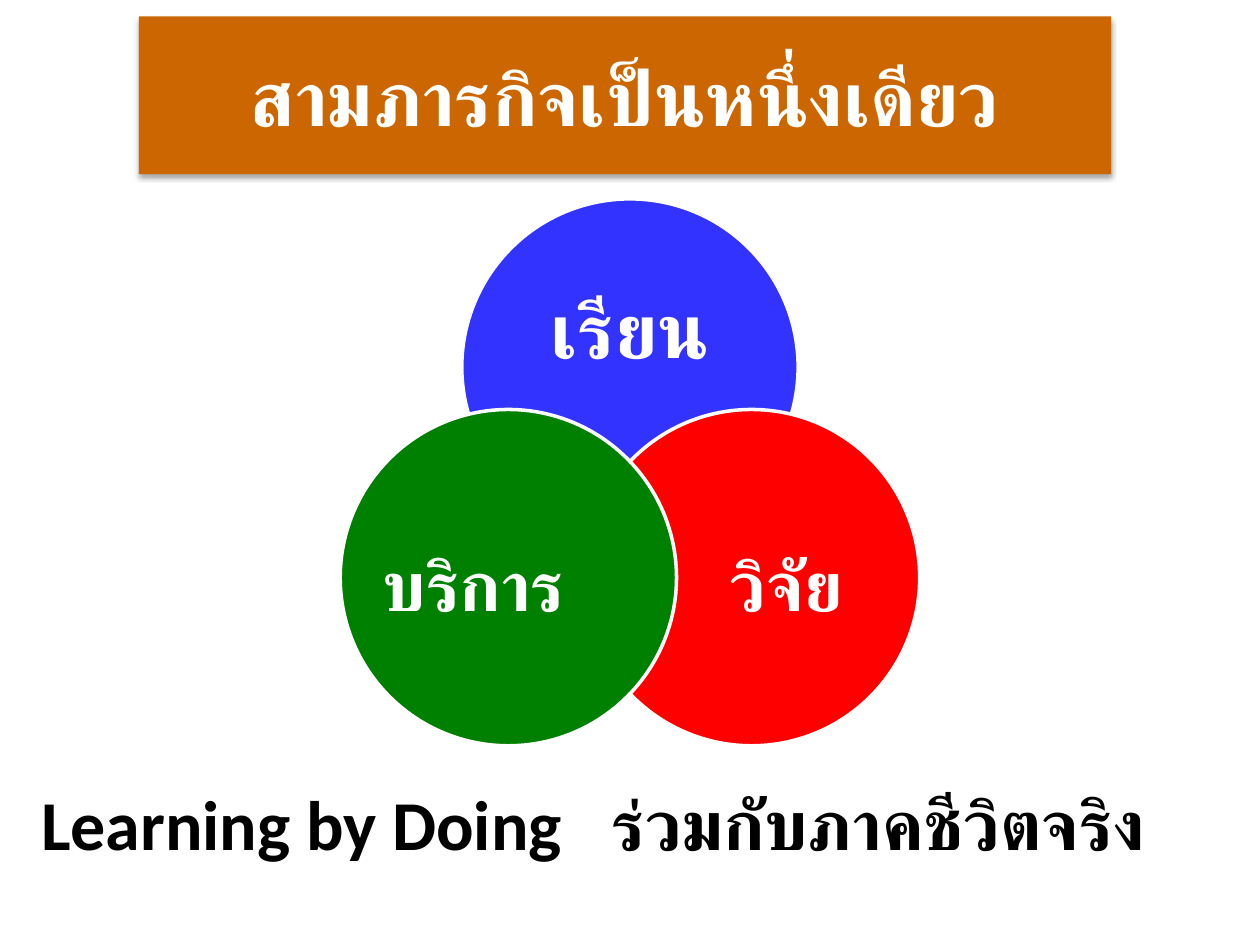
from dataclasses import dataclass
from math import cos, radians, sin

from lxml.etree import SubElement
from pptx import Presentation
from pptx.dml.color import RGBColor
from pptx.enum.shapes import MSO_SHAPE
from pptx.enum.text import MSO_ANCHOR, MSO_AUTO_SIZE, PP_ALIGN
from pptx.oxml.ns import qn
from pptx.util import Cm, Pt


@dataclass(frozen=True)
class Theme:
    font: str = "Calibri"
    banner: str = "CC6600"
    learning: str = "3333FF"
    research: str = "FF0000"
    service: str = "008000"
    light: str = "FFFFFF"
    dark: str = "000000"
    large: int = 44
    medium: int = 40


class SlideBuilder:
    """Holds the theme and the current slide."""

    def __init__(self, slide, theme):
        self.slide = slide
        self.theme = theme

    def set_text(self, shape, text, size, color, align):
        frame = shape.text_frame
        frame.word_wrap = True
        frame.vertical_anchor = MSO_ANCHOR.MIDDLE
        frame.text = text
        paragraph = frame.paragraphs[0]
        paragraph.alignment = align
        font = paragraph.font
        font.name, font.size, font.bold = self.theme.font, Pt(size), True
        font.color.rgb = RGBColor.from_string(color)
        return paragraph

    def paint(self, shape, color):
        shape.fill.solid()
        shape.fill.fore_color.rgb = RGBColor.from_string(color)

    def title(self, text, left, top, width, height):
        shape = self.slide.shapes.title
        shape.left, shape.top = Cm(left), Cm(top)
        shape.width, shape.height = Cm(width), Cm(height)
        self.paint(shape, self.theme.banner)
        self.set_text(shape, text, self.theme.large, self.theme.light, PP_ALIGN.CENTER)
        shape.text_frame.auto_size = MSO_AUTO_SIZE.NONE
        # Soft shadow below the banner
        effects = SubElement(shape.element.spPr, qn("a:effectLst"))
        shadow = SubElement(effects, qn("a:outerShdw"), blurRad=str(Pt(3.1)),
                            dist=str(Pt(1.8)), dir="5400000", rotWithShape="0")
        color = SubElement(shadow, qn("a:srgbClr"), val=self.theme.dark)
        SubElement(color, qn("a:alpha"), val="35000")

    def circle(self, center_x, center_y, diameter, color):
        shape = self.slide.shapes.add_shape(
            MSO_SHAPE.OVAL, Cm(center_x - diameter / 2), Cm(center_y - diameter / 2),
            Cm(diameter), Cm(diameter))
        shape.shadow.inherit = False
        self.paint(shape, color)
        shape.line.color.rgb = RGBColor.from_string(self.theme.light)
        shape.line.width = Pt(2)

    def label(self, text, center_x, center_y, width, height, size):
        box = self.slide.shapes.add_textbox(
            Cm(center_x - width / 2), Cm(center_y - height / 2), Cm(width), Cm(height))
        frame = box.text_frame
        frame.margin_left = frame.margin_right = frame.margin_top = frame.margin_bottom = 0
        paragraph = self.set_text(box, text, size, self.theme.light, PP_ALIGN.CENTER)
        paragraph.line_spacing = 0.9

    def caption(self, text, left, top, width, height, tab_position):
        box = self.slide.shapes.add_textbox(Cm(left), Cm(top), Cm(width), Cm(height))
        paragraph = self.set_text(box, text, self.theme.medium, self.theme.dark, PP_ALIGN.LEFT)
        box.text_frame.vertical_anchor = MSO_ANCHOR.TOP
        # The tab stop separates the two phrases
        properties = paragraph._p.get_or_add_pPr()
        tabs = properties.makeelement(qn("a:tabLst"))
        SubElement(tabs, qn("a:tab"), pos=str(Cm(tab_position)), algn="l")
        properties.insert(0, tabs)


def main():
    presentation = Presentation()
    presentation.slide_width, presentation.slide_height = Cm(25.4), Cm(19.05)
    slide = presentation.slides.add_slide(presentation.slide_layouts[5])
    theme = Theme()
    builder = SlideBuilder(slide, theme)

    # Banner
    builder.title("สามภารกิจเป็นหนึ่งเดียว", 2.8, 0.33, 19.6, 3.18)

    # Three overlapping circles, evenly spaced around a common centre
    middle_x, middle_y, spread, diameter = 12.7, 10.23, 2.83, 6.78
    # text, angle, colour, label offset (x, y), label size (w, h), type size
    missions = [
        ("เรียน", -90, theme.learning, (0, -0.67), (4.98, 3.05), theme.large),
        ("วิจัย", 30, theme.research, (0.7, 0.23), (4.06, 3.73), theme.medium),
        ("บริการ", 150, theme.service, (-0.7, 0.23), (4.06, 3.73), theme.medium),
    ]
    for text, angle, color, (shift_x, shift_y), (width, height), size in missions:
        center_x = middle_x + spread * cos(radians(angle))
        center_y = middle_y + spread * sin(radians(angle))
        builder.circle(center_x, center_y, diameter, color)
        builder.label(text, center_x + shift_x, center_y + shift_y, width, height, size)

    # Closing line
    builder.caption("Learning by Doing\tร่วมกับภาคชีวิตจริง", 0.58, 15.62, 24.28, 1.96, 11.5)

    presentation.save("out.pptx")


if __name__ == "__main__":
    main()
